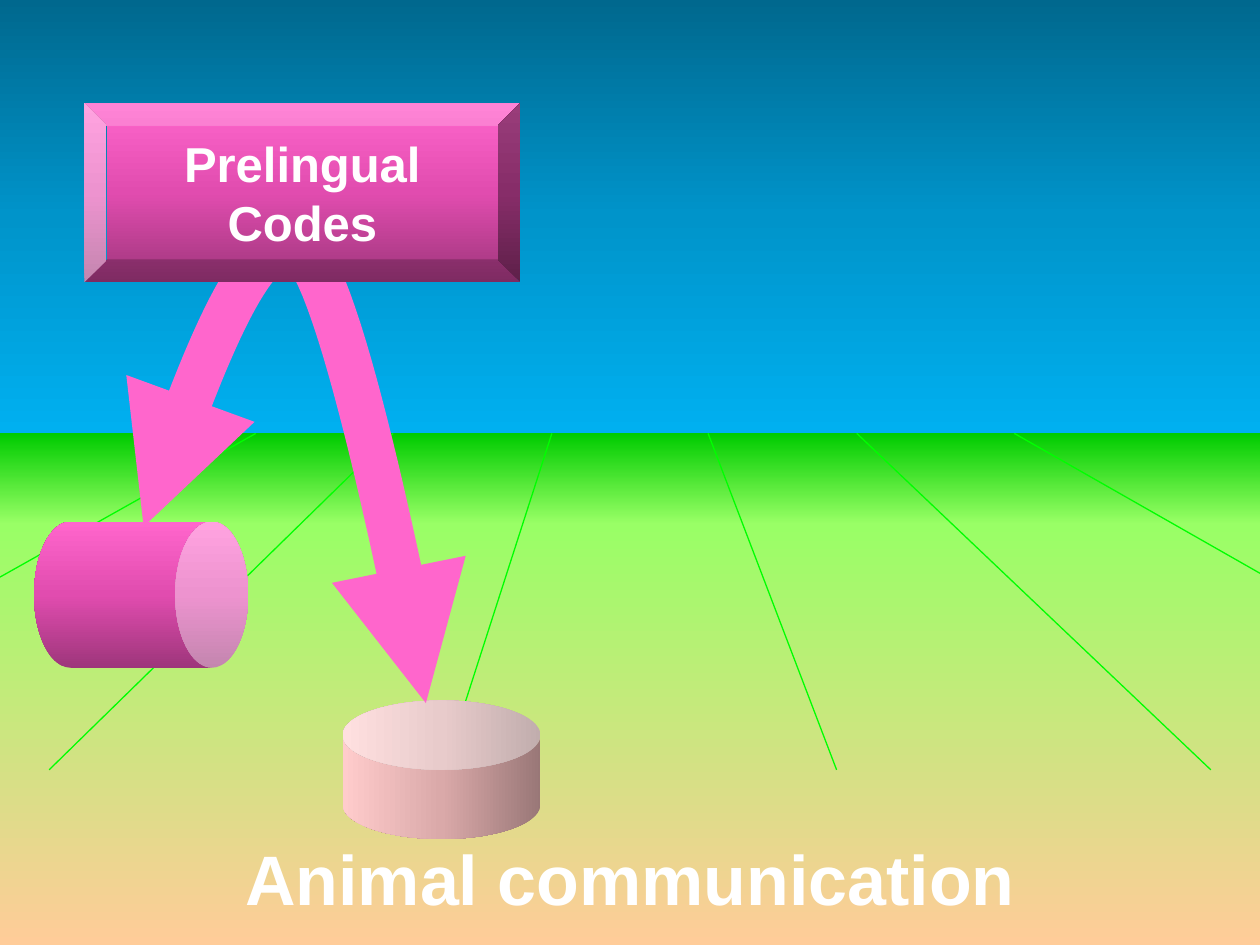
from dataclasses import dataclass

from lxml.etree import SubElement
from pptx import Presentation
from pptx.dml.color import RGBColor
from pptx.enum.shapes import MSO_CONNECTOR, MSO_SHAPE
from pptx.enum.text import MSO_ANCHOR, MSO_AUTO_SIZE, PP_ALIGN
from pptx.oxml.ns import qn
from pptx.util import Pt

PX = 9144


@dataclass(frozen=True)
class Theme:
    """Colours, type sizes and line widths of the slide."""

    sky: tuple = ("00688E", "0094CA", "00B0F0")
    horizon: tuple = ("00CC00", "99FF66")
    field: tuple = ("99FF66", "FFCC99")
    pink: tuple = ("9E367B", "E14CAF", "FF66CC")
    rose: tuple = ("997777", "DAA9A9", "FFCCCC")
    furrow: str = "00FF00"
    arrow: str = "FF66CC"
    text: str = "FFFFFF"
    font: str = "Arial"
    title_size: int = 40
    box_size: int = 28
    furrow_width: float = 0.75
    arrow_width: int = 26


THEME = Theme()


def emu(*lengths):
    """Turn px lengths into EMU."""
    return [round(v * PX) for v in lengths]


def set_format(target, values):
    """Set each attribute named in a dict."""
    for name, value in values.items():
        setattr(target, name, value)


def set_line(line, color, width):
    """Give a line its colour and its width in points."""
    line.color.rgb = RGBColor.from_string(color)
    line.width = Pt(width)


def add_gradient_shape(slide, kind, box, colors, angle, rotation=0):
    """Add a borderless shape with evenly spaced gradient stops."""
    sp = slide.shapes.add_shape(kind, *emu(*box))
    sp.shadow.inherit = False
    sp.line.fill.background()
    sp.rotation = rotation
    sp.fill.gradient()
    sp.fill.gradient_angle = angle
    stops = sp.element.spPr.find(qn("a:gradFill")).find(qn("a:gsLst"))
    for stop in list(stops):
        stops.remove(stop)
    for i, color in enumerate(colors):
        stop = SubElement(stops, qn("a:gs"), pos=str(100000 * i // (len(colors) - 1)))
        SubElement(stop, qn("a:srgbClr"), val=color)
    return sp


def write_text(sp, text, size, values):
    """Write one centred bold paragraph."""
    tf = sp.text_frame
    set_format(tf, {"word_wrap": True, **values})
    p = tf.paragraphs[0]
    p.alignment = PP_ALIGN.CENTER
    r = p.add_run()
    r.text = text
    set_format(r.font, {"name": THEME.font, "size": Pt(size), "bold": True})
    r.font.color.rgb = RGBColor.from_string(THEME.text)


def add_ground(slide, box):
    """Draw the field, its horizon band and the furrows."""
    x, y, w, h = box
    band, depth = 72, 267
    furrows = [
        (562, 664, depth), (805, w, 111), (680, 961, depth),
        (438, 352, depth), (312, 39, depth), (203, 0, 114),
    ]
    add_gradient_shape(slide, MSO_SHAPE.RECTANGLE, (x, y + band, w, h - band), THEME.field, 270)
    add_gradient_shape(slide, MSO_SHAPE.RECTANGLE, (x, y, w, band), THEME.horizon, 270)
    for top, bottom, drop in furrows:
        ends = emu(x + top, y, x + bottom, y + drop)
        line = slide.shapes.add_connector(MSO_CONNECTOR.STRAIGHT, *ends)
        set_line(line.line, THEME.furrow, THEME.furrow_width)
        SubElement(line.element.spPr, qn("a:effectLst"))


def add_sky(slide, box):
    """Draw the sky."""
    add_gradient_shape(slide, MSO_SHAPE.RECTANGLE, box, THEME.sky, 270)


def add_title(slide, box):
    """Write the slide title."""
    sp = slide.shapes.add_textbox(*emu(*box))
    write_text(sp, "Animal communication", THEME.title_size,
               {"auto_size": MSO_AUTO_SIZE.SHAPE_TO_FIT_TEXT})


def add_can(slide, box, colors, rotation=0):
    """Draw a can shaded along its width."""
    sp = add_gradient_shape(slide, MSO_SHAPE.CAN, box, colors, 180, rotation)
    sp.adjustments[0] = 0.5


def bezier(points, steps=32):
    """Return points along a cubic curve, without its start."""
    def at(t):
        weights = ((1 - t) ** 3, 3 * t * (1 - t) ** 2, 3 * t * t * (1 - t), t ** 3)
        return tuple(sum(k * p[axis] for k, p in zip(weights, points)) for axis in (0, 1))

    return [at(i / steps) for i in range(1, steps + 1)]


def add_arrow(slide, box):
    """Draw the curved arrow that points to both cans."""
    x, y, w, h = box
    start, peak, end = (0, 224), (124, 3), (w, h)
    curve = (bezier([start, (43, 102), (87, -20), peak])
             + bezier([peak, (161, 26), end, end]))
    points = [emu(x + px, y + py) for px, py in [start] + curve]
    builder = slide.shapes.build_freeform(*points[0])
    builder.add_line_segments(points[1:], close=False)
    sp = builder.convert_to_shape()
    sp.shadow.inherit = False
    sp.fill.background()
    set_line(sp.line, THEME.arrow, THEME.arrow_width)
    ln = sp.element.spPr.find(qn("a:ln"))
    for end_tag in ("a:headEnd", "a:tailEnd"):
        SubElement(ln, qn(end_tag), type="triangle")


def add_codes_box(slide, box):
    """Draw the bevelled box with its label."""
    sp = add_gradient_shape(slide, MSO_SHAPE.BEVEL, box, THEME.pink, 90)
    write_text(sp, "Prelingual Codes", THEME.box_size,
               {"vertical_anchor": MSO_ANCHOR.MIDDLE})


def main():
    """Build and save the slide."""
    prs = Presentation()
    width, height, horizon = 1000, 750, 344
    prs.slide_width, prs.slide_height = emu(width, height)
    slide = prs.slides.add_slide(prs.slide_layouts[6])
    add_ground(slide, (0, horizon, width, height - horizon))
    add_sky(slide, (0, 0, width, horizon))
    add_title(slide, (0, 658, width, 77))
    add_can(slide, (272, 556, 157, 110), THEME.rose)
    add_can(slide, (54, 387, 116, 170), THEME.pink, rotation=90)
    add_arrow(slide, (114, 194, 224, 364))
    add_codes_box(slide, (67, 82, 346, 142))
    prs.save("out.pptx")


if __name__ == "__main__":
    main()
